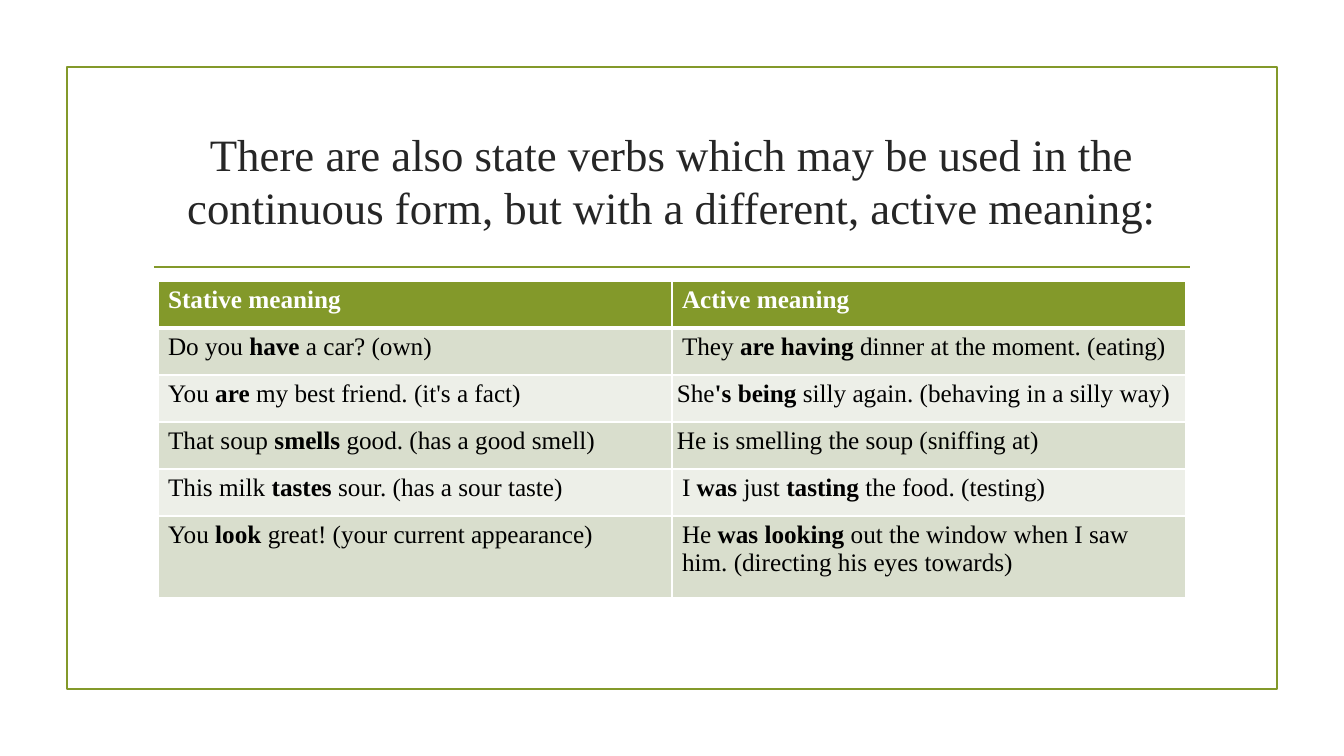
from lxml import etree
from pptx import Presentation
from pptx import util as u
from pptx.dml.color import RGBColor
from pptx.enum import shapes, text
from pptx.oxml import ns

COLORS = {"green": "83992A", "title": "262626", "text": "000000",
          "white": "FFFFFF", "dark_band": "D9DECD", "light_band": "EDEFE8"}
HEADERS = ("Stative meaning", "Active meaning")
EXAMPLES = [
    ("Do you **have** a car? (own)",
     "They **are having** dinner at the moment. (eating)"),
    ("You **are** my best friend. (it's a fact)",
     "She**'s being** silly again. (behaving in a silly way)"),
    ("That soup **smells** good. (has a good smell)",
     "He is smelling the soup (sniffing at)"),
    ("This milk **tastes** sour. (has a sour taste)",
     "I **was** just **tasting** the food. (testing)"),
    ("You **look** great! (your current appearance)",
     "He **was looking** out the window when I saw him. (directing his eyes towards)"),
]
TIGHT_CELLS = {(2, 1), (3, 1)}


def px(n):
    return u.Emu(round(n * 914400 / 100.8))


def rgb(name):
    return RGBColor.from_string(COLORS[name])


class Deck:
    """Holds the slide and its style, and draws each kind of element."""

    font = "Times New Roman"

    def __init__(self, width, height):
        self.prs = Presentation()
        self.prs.slide_width, self.prs.slide_height = px(width), px(height)
        self.slide = self.prs.slides.add_slide(self.prs.slide_layouts[5])

    def style(self, p, size, color):
        p.font.name, p.font.size = self.font, u.Pt(size)
        p.font.color.rgb = rgb(color)

    def title(self, words, x, y, w, h):
        sp = self.slide.shapes.title
        sp.left, sp.top, sp.width, sp.height = map(px, (x, y, w, h))
        tf = sp.text_frame
        tf.text = words
        tf.word_wrap = True
        tf.auto_size = text.MSO_AUTO_SIZE.NONE
        tf.vertical_anchor = text.MSO_ANCHOR.MIDDLE
        p = tf.paragraphs[0]
        p.alignment = text.PP_ALIGN.CENTER
        self.style(p, 32, "title")

    def frame(self, x, y, w, h):
        sp = self.slide.shapes.add_shape(
            shapes.MSO_SHAPE.RECTANGLE, *map(px, (x, y, w, h)))
        sp.shadow.inherit = False
        sp.fill.background()
        sp.line.color.rgb, sp.line.width = rgb("green"), u.Pt(1.25)

    def rule(self, x1, x2, y):
        line = self.slide.shapes.add_connector(
            shapes.MSO_CONNECTOR.STRAIGHT, *map(px, (x1, y, x2, y)))
        line.line.color.rgb, line.line.width = rgb("green"), u.Pt(1.25)
        etree.SubElement(line._element.spPr, ns.qn("a:effectLst"))

    def borders(self, cell, top, bottom):
        tcPr = cell._tc.get_or_add_tcPr()
        for side, width in (("L", 1), ("R", 1), ("T", top), ("B", bottom)):
            ln = etree.SubElement(tcPr, ns.qn(f"a:ln{side}"), w=str(u.Pt(width)))
            fill = etree.SubElement(ln, ns.qn("a:solidFill"))
            etree.SubElement(fill, ns.qn("a:srgbClr"), val=COLORS["white"])

    def cell(self, cell, words, fill, color, bold, tight):
        cell.fill.solid()
        cell.fill.fore_color.rgb = rgb(fill)
        if tight:
            cell.margin_left = cell.margin_right = px(5)
        p = cell.text_frame.paragraphs[0]
        self.style(p, 18, color)
        for i, part in enumerate(words.split("**")):
            r = p.add_run()
            r.text = part
            r.font.bold = bold or i % 2 == 1

    def table(self, rows, x, y, col_w, heights):
        cols = len(rows[0])
        tbl = self.slide.shapes.add_table(
            len(rows), cols, px(x), px(y), px(col_w * cols), px(sum(heights))).table
        tbl.horz_banding = False
        for i, (row, height) in enumerate(zip(rows, heights)):
            tbl.rows[i].height = px(height)
            head = i == 0
            fill = "green" if head else "dark_band" if i % 2 else "light_band"
            for j, words in enumerate(row):
                cell = tbl.cell(i, j)
                self.borders(cell, 3 if i == 1 else 1, 3 if head else 1)
                self.cell(cell, words, fill, "white" if head else "text",
                          head, (i, j) in TIGHT_CELLS)
        for col in tbl.columns:
            col.width = px(col_w)


def main():
    deck = Deck(1344, 756)
    deck.frame(67, 67, 1210, 622)
    deck.rule(154, 1190, 267)
    deck.title("There are also state verbs which may be used in the continuous "
               "form, but with a different, active meaning:", 143, 108, 1058, 144)
    deck.table([HEADERS] + EXAMPLES, 158, 281, 514, [47] * 5 + [82])
    deck.prs.save("out.pptx")


if __name__ == "__main__":
    main()
